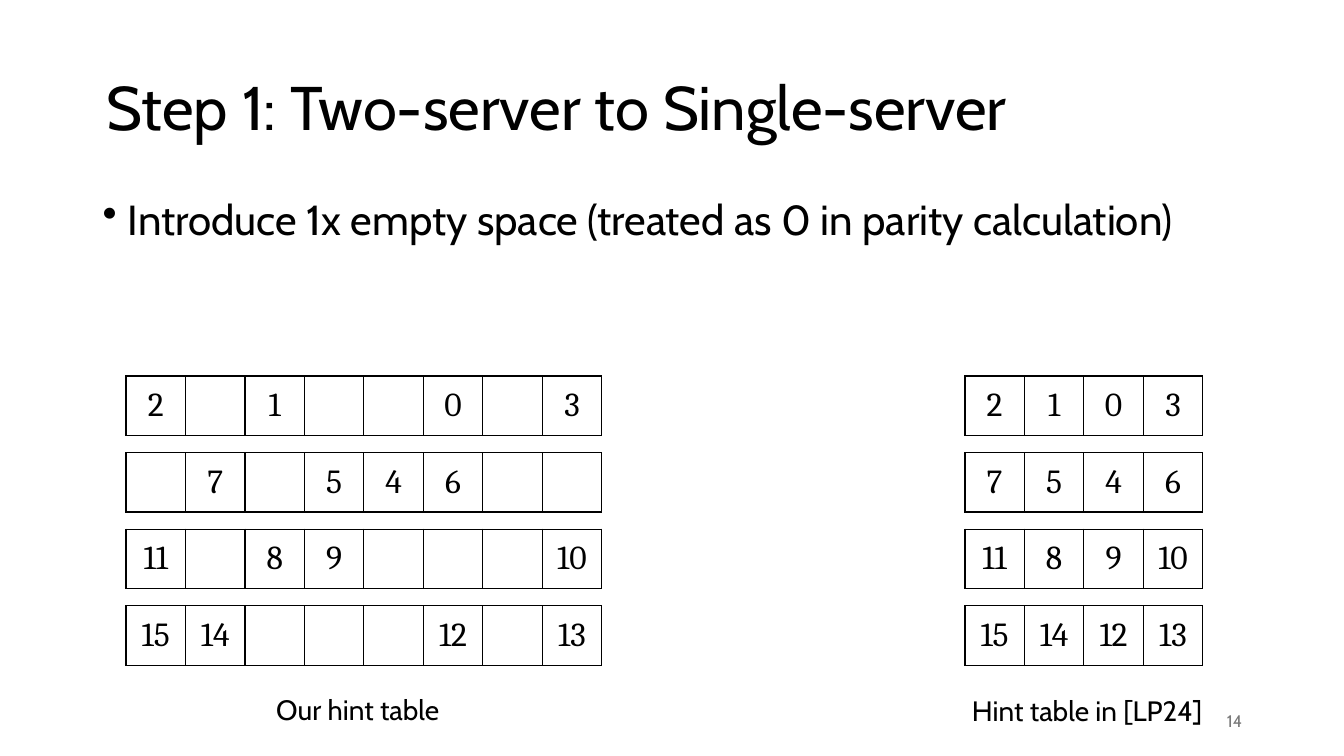
import pptx
import pptx.dml.color
import pptx.enum.text
import pptx.oxml.ns
import pptx.util
from lxml import etree

Inches, Pt = pptx.util.Inches, pptx.util.Pt
RGBColor = pptx.dml.color.RGBColor
PP_ALIGN = pptx.enum.text.PP_ALIGN
MSO_ANCHOR = pptx.enum.text.MSO_ANCHOR
qn = pptx.oxml.ns.qn

TITLE = "Step 1: Two-server to Single-server"
BULLET = "Introduce 1x empty space (treated as 0 in parity calculation)"
HINT_ROWS = [
    ["2", "", "1", "", "", "0", "", "3"],
    ["", "7", "", "5", "4", "6", "", ""],
    ["11", "", "8", "9", "", "", "", "10"],
    ["15", "14", "", "", "", "12", "", "13"],
]
OUR_CAPTION = "Our hint table"
LP24_CAPTION = "Hint table in [LP24]"
PAGE = "14"

BLACK = RGBColor(0x00, 0x00, 0x00)
GRAY = RGBColor(0x79, 0x79, 0x79)
CELL = 0.59
ROW_TOP, ROW_STEP = 3.73, 0.76
OUR_LEFT, LP24_LEFT = 1.25, 9.57
INSET_X, INSET_Y = 0.07, 0.04


def set_font(p, name, size, color=BLACK):
    p.font.name = name
    p.font.size = Pt(size)
    p.font.color.rgb = color


def set_insets(target):
    target.margin_left = target.margin_right = Inches(INSET_X)
    target.margin_top = target.margin_bottom = Inches(INSET_Y)


def add_text(slide, box, text, size, color=BLACK, anchor=MSO_ANCHOR.TOP, wrap=True):
    tf = slide.shapes.add_textbox(*map(Inches, box)).text_frame
    tf.word_wrap = wrap
    tf.vertical_anchor = anchor
    p = tf.paragraphs[0]
    p.text = text
    set_font(p, "Cabin", size, color)
    return tf


def add_bullet(p):
    pPr = p._p.get_or_add_pPr()
    pPr.set("marL", str(Inches(0.25)))
    pPr.set("indent", str(-Inches(0.25)))
    bullet = etree.Element(qn("a:buChar"), char="•")
    pPr.find(qn("a:defRPr")).addprevious(bullet)


def add_caption(slide, box, text):
    tf = add_text(slide, box, text, 20, wrap=False)
    tf.auto_size = pptx.enum.text.MSO_AUTO_SIZE.SHAPE_TO_FIT_TEXT
    set_insets(tf)


def add_borders(cell):
    tcPr = cell._tc.get_or_add_tcPr()
    for i, side in enumerate(("a:lnL", "a:lnR", "a:lnT", "a:lnB")):
        ln = etree.Element(qn(side), w=str(Pt(1)))
        fill = etree.SubElement(ln, qn("a:solidFill"))
        etree.SubElement(fill, qn("a:srgbClr"), val=str(BLACK))
        tcPr.insert(i, ln)


def add_hint_row(slide, left, top, values):
    size = (Inches(CELL * len(values)), Inches(CELL))
    frame = slide.shapes.add_table(1, len(values), Inches(left), Inches(top), *size)
    table = frame.table
    table.first_row = table.horz_banding = False
    table.rows[0].height = Inches(CELL)
    for i, value in enumerate(values):
        table.columns[i].width = Inches(CELL)
        cell = table.cell(0, i)
        cell.fill.background()
        cell.vertical_anchor = MSO_ANCHOR.MIDDLE
        set_insets(cell)
        p = cell.text_frame.paragraphs[0]
        p.text = value
        p.alignment = PP_ALIGN.CENTER
        set_font(p, "Cambria", 24)
        add_borders(cell)


def main():
    prs = pptx.Presentation()
    prs.slide_width, prs.slide_height = Inches(13.33), Inches(7.5)
    slide = prs.slides.add_slide(prs.slide_layouts[6])

    tf = add_text(slide, (0.96, 0.51, 9.86, 1.18), TITLE, 44, anchor=MSO_ANCHOR.MIDDLE)
    tf.paragraphs[0].line_spacing = 0.9

    tf = add_text(slide, (0.92, 1.72, 11.72, 1.72), BULLET, 30)
    p = tf.paragraphs[0]
    p.line_spacing = 1.3
    p.space_before = Pt(10)
    add_bullet(p)

    for i, values in enumerate(HINT_ROWS):
        top = ROW_TOP + i * ROW_STEP
        add_hint_row(slide, OUR_LEFT, top, values)
        add_hint_row(slide, LP24_LEFT, top, [v for v in values if v])

    add_caption(slide, (2.67, 6.83, 1.87, 0.41), OUR_CAPTION)
    add_caption(slide, (LP24_LEFT, 6.84, 2.46, 0.41), LP24_CAPTION)

    tf = add_text(slide, (9.42, 6.95, 3, 0.4), PAGE, 12, GRAY, MSO_ANCHOR.MIDDLE)
    tf.paragraphs[0].alignment = PP_ALIGN.RIGHT

    prs.save("out.pptx")


if __name__ == "__main__":
    main()
